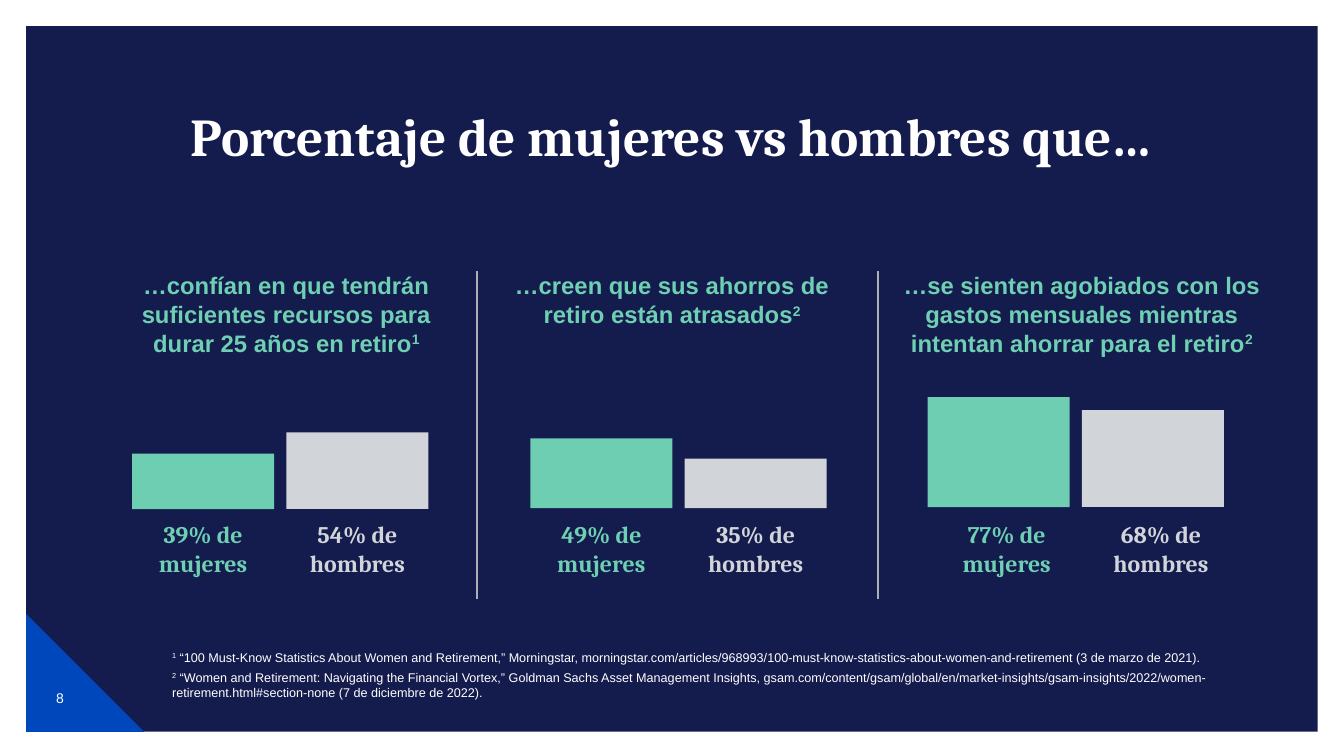
from lxml import etree
from pptx import Presentation
from pptx import util as u
from pptx.dml.color import RGBColor
from pptx.enum import shapes, text
from pptx.oxml.ns import qn

EMU_PER_PX = 9144
NAVY, BLUE, WHITE = "141B4D", "0047BB", "FFFFFF"
GREEN, GREEN_TEXT, GREY, RULE = "6ECEB1", "6ECFB2", "D1D4D8", "ABAFB8"
BAR_WIDTH, BAR_STEP = 141, 153
PANEL_TOP, LABEL_TOP = 269, 516

PANELS = [
    {"heading": "…confían en que tendrán suficientes recursos para durar 25 años en retiro",
     "note": "1", "left": 121, "width": 326, "bars": 131, "labels": 131,
     "base": 505, "women": 39, "men": 54},
    {"heading": "…creen que sus ahorros de retiro están atrasados",
     "note": "2", "left": 492, "width": 349, "bars": 526, "labels": 526,
     "base": 504, "women": 49, "men": 35},
    {"heading": "…se sienten agobiados con los gastos mensuales mientras intentan ahorrar para el retiro",
     "note": "2", "left": 895, "width": 356, "bars": 920, "labels": 928,
     "base": 503, "women": 77, "men": 68},
]
FOOTNOTES = [
    ("1", " “100 Must-Know Statistics About Women and Retirement,” Morningstar, "
          "morningstar.com/articles/968993/100-must-know-statistics-about-women-and-retirement "
          "(3 de marzo de 2021)."),
    ("2", " “Women and Retirement: Navigating the Financial Vortex,” Goldman Sachs Asset "
          "Management Insights, gsam.com/content/gsam/global/en/market-insights/gsam-insights/"
          "2022/women-retirement.html#section-none (7 de diciembre de 2022)."),
]


def px(*lengths):
    """Turn pixel lengths into EMU."""
    return [u.Emu(length * EMU_PER_PX) for length in lengths]


def colour(code):
    """Turn a hex string into a colour."""
    return RGBColor.from_string(code)


def add_block(slide, kind, box, fill):
    """Add a filled shape without outline or shadow."""
    shape = slide.shapes.add_shape(kind, *px(*box))
    shape.shadow.inherit = False
    shape.fill.solid()
    shape.fill.fore_color.rgb = colour(fill)
    shape.line.fill.background()


def add_text_frame(slide, box, side=0, edge=0):
    """Add a wrapping text box and return its frame."""
    frame = slide.shapes.add_textbox(*px(*box)).text_frame
    frame.word_wrap = True
    frame.margin_left = frame.margin_right = px(side)[0]
    frame.margin_top = frame.margin_bottom = px(edge)[0]
    return frame


def add_run(paragraph, words, font, size, code, bold=False, raised=False):
    """Add one formatted run to a paragraph."""
    run = paragraph.add_run()
    run.text = words
    run.font.name = font
    run.font.size = u.Pt(size)
    run.font.bold = bold
    run.font.color.rgb = colour(code)
    if raised:
        run._r.get_or_add_rPr().set("baseline", "30000")


def add_centred(slide, box, words, font, size, code, bold=True, edge=0):
    """Add a centred one-run text box and return its paragraph."""
    paragraph = add_text_frame(slide, box, edge=edge).paragraphs[0]
    paragraph.alignment = text.PP_ALIGN.CENTER
    add_run(paragraph, words, font, size, code, bold)
    return paragraph


def add_divider(slide, x):
    """Add a thin vertical line between panels."""
    line = slide.shapes.add_connector(
        shapes.MSO_CONNECTOR.STRAIGHT, *px(x, PANEL_TOP, x, 594))
    line.line.color.rgb = colour(RULE)
    line.line.width = u.Pt(1)
    etree.SubElement(line._element.spPr, qn("a:effectLst"))


def add_panel(slide, panel):
    """Add a heading with its two bars, drawn to scale, and their labels."""
    heading = add_centred(slide, (panel["left"], PANEL_TOP, panel["width"], 86),
                          panel["heading"], "Arial", 17, GREEN_TEXT)
    add_run(heading, panel["note"], "Arial", 17, GREEN_TEXT, True, raised=True)
    groups = [("mujeres", panel["women"], GREEN, GREEN_TEXT),
              ("hombres", panel["men"], GREY, GREY)]
    for index, (group, percent, fill, ink) in enumerate(groups):
        shift = index * BAR_STEP
        height = round(percent * BAR_WIDTH / 100)
        add_block(slide, shapes.MSO_SHAPE.RECTANGLE,
                  (panel["bars"] + shift, panel["base"] - height, BAR_WIDTH, height), fill)
        add_centred(slide, (panel["labels"] + shift, LABEL_TOP, BAR_WIDTH, 57),
                    f"{percent}% de {group}", "Cambria", 17, ink)


def add_footnotes(slide):
    """Add the numbered sources."""
    frame = add_text_frame(slide, (161, 640, 1053, 60), side=10, edge=5)
    for index, (number, source) in enumerate(FOOTNOTES):
        paragraph = frame.add_paragraph() if index else frame.paragraphs[0]
        if index:
            paragraph.space_before = u.Pt(3)
        add_run(paragraph, number, "Arial", 9, WHITE, raised=True)
        add_run(paragraph, source, "Arial", 9, WHITE)


def main():
    """Build and save the slide."""
    presentation = Presentation()
    presentation.slide_width, presentation.slide_height = px(1333, 750)
    slide = presentation.slides.add_slide(presentation.slide_layouts[6])
    add_block(slide, shapes.MSO_SHAPE.RECTANGLE, (26, 26, 1281, 700), NAVY)
    add_block(slide, shapes.MSO_SHAPE.RIGHT_TRIANGLE, (26, 609, 117, 117), BLUE)
    number = add_text_frame(slide, (32, 663, 55, 58))
    number.vertical_anchor = text.MSO_ANCHOR.MIDDLE
    number.paragraphs[0].alignment = text.PP_ALIGN.CENTER
    add_run(number.paragraphs[0], "8", "Arial", 10, WHITE)
    title = add_centred(slide, (95, 105, 1143, 100), "Porcentaje de mujeres vs hombres que…",
                        "Cambria", 38, WHITE, edge=5)
    title.line_spacing = 0.9
    for panel in PANELS:
        add_panel(slide, panel)
    for x in (473, 871):
        add_divider(slide, x)
    add_footnotes(slide)
    presentation.save("out.pptx")


if __name__ == "__main__":
    main()
